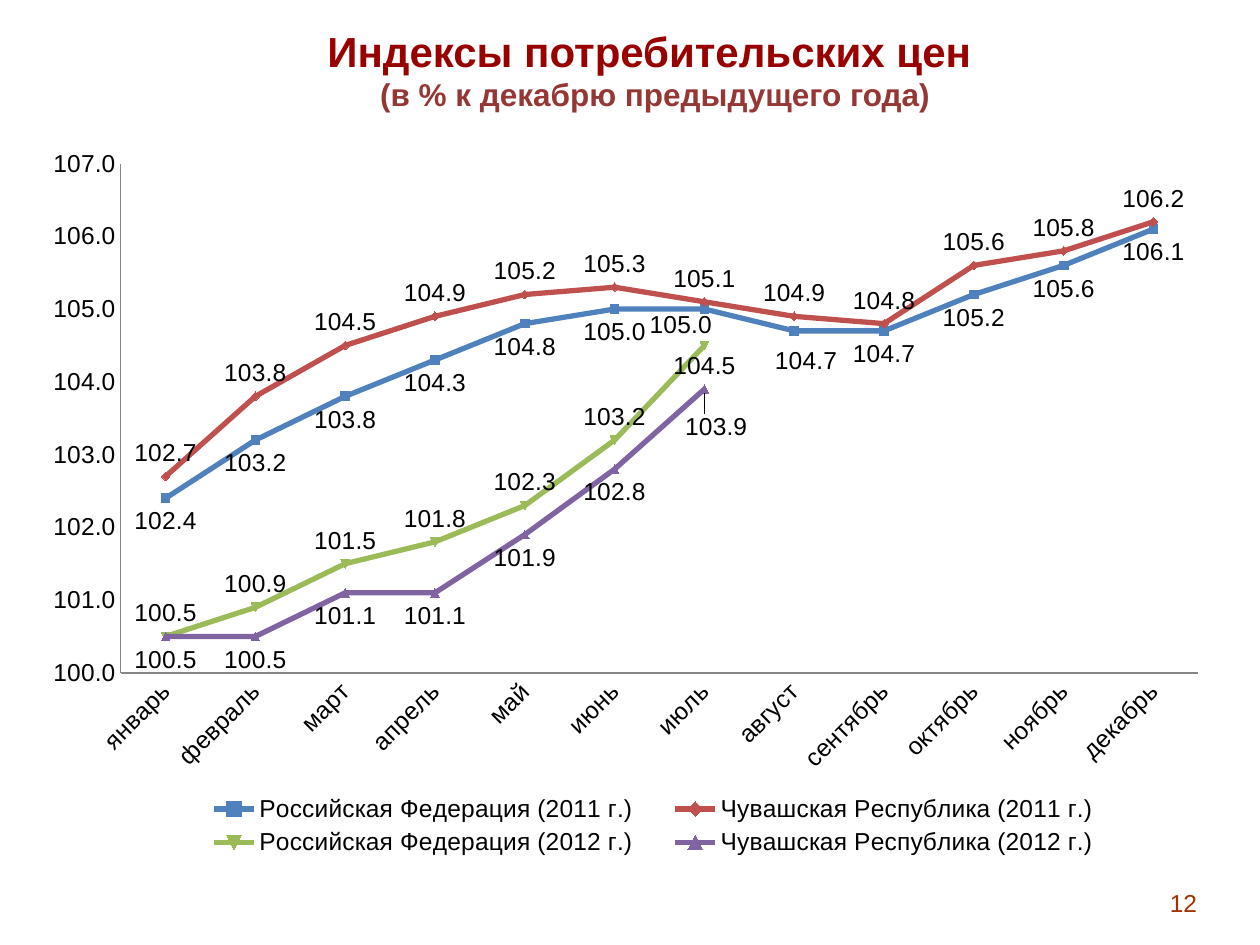
"""Build the consumer price index slide with its four-series line chart."""
from dataclasses import dataclass, field
from typing import Optional

from lxml import etree
from pptx import Presentation
from pptx import util as u
from pptx.chart.data import CategoryChartData
from pptx.dml.color import RGBColor
from pptx.enum import chart as ch, text
from pptx.oxml.ns import qn


@dataclass(frozen=True)
class Theme:
    font: str = "Arial"
    title: str = "990000"
    subtitle: str = "953735"
    number: str = "A03202"
    ink: str = "000000"
    axis: str = "868686"
    title_size: int = 24
    subtitle_size: int = 18
    small_size: int = 14
    line_width: float = 3


@dataclass(frozen=True)
class Share:
    x: float
    y: float
    w: float
    h: float


@dataclass(frozen=True)
class Line:
    text: str
    size: int
    color: str
    bold: bool = False


@dataclass(frozen=True)
class Index:
    name: str
    color: str
    above: bool
    values: tuple[float, ...]
    shifts: dict[int, tuple[float, float]] = field(default_factory=dict)


THEME = Theme()
WIDTH, HEIGHT = u.Inches(10), u.Inches(7.5)
NUMBER_FORMAT = "0.0"
MONTHS = ("январь", "февраль", "март", "апрель", "май", "июнь", "июль",
          "август", "сентябрь", "октябрь", "ноябрь", "декабрь")
INDEXES = (
    Index("Российская Федерация (2011 г.)", "4F81BD", False,
          (102.4, 103.2, 103.8, 104.3, 104.8, 105, 105, 104.7, 104.7, 105.2, 105.6, 106.1),
          {6: (-0.02, -0.01), 7: (0.01, 0.01)}),
    Index("Чувашская Республика (2011 г.)", "C0504D", True,
          (102.7, 103.8, 104.5, 104.9, 105.2, 105.3, 105.1, 104.9, 104.8, 105.6, 105.8, 106.2)),
    Index("Российская Федерация (2012 г.)", "9BBB59", True,
          (100.5, 100.9, 101.5, 101.8, 102.3, 103.2, 104.5), {6: (0.0, 0.06)}),
    Index("Чувашская Республика (2012 г.)", "8064A2", False,
          (100.5, 100.5, 101.1, 101.1, 101.9, 102.8, 103.9), {6: (0.01, 0.02)}),
)


def assign(target, values: dict) -> None:
    for name, value in values.items():
        setattr(target, name, value)


def style(font, size: int, color: str, bold: bool = False) -> None:
    assign(font, {"name": THEME.font, "size": u.Pt(size), "bold": bold})
    font.color.rgb = RGBColor.from_string(color)


def place(area: Share) -> tuple[int, int, int, int]:
    return (round(area.x * WIDTH), round(area.y * HEIGHT),
            round(area.w * WIDTH), round(area.h * HEIGHT))


def layout(values: dict):
    root = etree.Element(qn("c:layout"))
    manual = etree.SubElement(root, qn("c:manualLayout"))
    for name, value in values.items():
        etree.SubElement(manual, qn(f"c:{name}")).set("val", str(value))
    return root


def fixed_layout(area: Share, **target: str):
    return layout({**target, "xMode": "edge", "yMode": "edge",
                   "x": area.x, "y": area.y, "w": area.w, "h": area.h})


def add_text(slide, area: Share, lines: list[Line], align, anchor) -> None:
    tf = slide.shapes.add_textbox(*place(area)).text_frame
    assign(tf, {"word_wrap": True, "vertical_anchor": anchor})
    for i, line in enumerate(lines):
        p = tf.add_paragraph() if i else tf.paragraphs[0]
        p.alignment = align
        r = p.add_run()
        r.text = line.text
        style(r.font, line.size, line.color, line.bold)


def shift_label(series, point: int, shift: tuple[float, float], position) -> None:
    label = series.points[point].data_label
    label.position = position
    style(label.font, THEME.small_size, THEME.ink)
    element = series.data_labels._element.xpath(f"c:dLbl[c:idx/@val='{point}']")[0]
    element.insert(1, layout({"x": shift[0], "y": shift[1]}))
    number = etree.Element(qn("c:numFmt"), formatCode=NUMBER_FORMAT, sourceLinked="0")
    element.insert(2, number)


def format_series(series, index: Index) -> None:
    color = RGBColor.from_string(index.color)
    series.smooth = False
    series.format.line.width = u.Pt(THEME.line_width)
    series.format.line.color.rgb = color
    marker = series.marker.format
    marker.fill.solid()
    marker.fill.fore_color.rgb = color
    marker.line.color.rgb = color
    position = ch.XL_LABEL_POSITION.ABOVE if index.above else ch.XL_LABEL_POSITION.BELOW
    labels = series.data_labels
    assign(labels, {"show_value": True, "position": position,
                    "number_format": NUMBER_FORMAT, "number_format_is_linked": False})
    style(labels.font, THEME.small_size, THEME.ink)
    for point, shift in index.shifts.items():
        shift_label(series, point, shift, position)


def format_axis(axis, values: dict) -> None:
    assign(axis, {"has_major_gridlines": False,
                  "major_tick_mark": ch.XL_TICK_MARK.NONE,
                  "minor_tick_mark": ch.XL_TICK_MARK.NONE, **values})
    style(axis.tick_labels.font, THEME.small_size, THEME.ink)
    axis.format.line.color.rgb = RGBColor.from_string(THEME.axis)


def add_index_chart(slide, area: Share, plot: Share, legend: Share) -> None:
    data = CategoryChartData(number_format=NUMBER_FORMAT)
    data.categories = MONTHS
    for index in INDEXES:
        padding: tuple[Optional[float], ...] = (None,) * (len(MONTHS) - len(index.values))
        data.add_series(index.name, index.values + padding)
    chart = slide.shapes.add_chart(ch.XL_CHART_TYPE.LINE_MARKERS, *place(area), data).chart
    assign(chart, {"has_title": False, "has_legend": True})
    style(chart.font, THEME.subtitle_size, THEME.ink)
    chart.plots[0].vary_by_categories = False
    for series, index in zip(chart.plots[0].series, INDEXES):
        format_series(series, index)
    format_axis(chart.category_axis, {})
    body = chart.category_axis._element.find(f"{qn('c:txPr')}/{qn('a:bodyPr')}")
    body.set("rot", "-2700000")
    format_axis(chart.value_axis, {"minimum_scale": 100, "maximum_scale": 107, "major_unit": 1})
    assign(chart.value_axis.tick_labels,
           {"number_format": NUMBER_FORMAT, "number_format_is_linked": False})
    assign(chart.legend, {"position": ch.XL_LEGEND_POSITION.BOTTOM, "include_in_layout": False})
    style(chart.legend.font, THEME.small_size, THEME.ink)
    key = chart.legend._element
    plot_area = chart._chartSpace.chart.plotArea
    for parent, spot, element in ((plot_area, 0, fixed_layout(plot, layoutTarget="inner")),
                                  (key, 1, fixed_layout(legend))):
        for old in parent.findall(qn("c:layout")):
            parent.remove(old)
        parent.insert(spot, element)


def main() -> None:
    prs = Presentation()
    assign(prs, {"slide_width": WIDTH, "slide_height": HEIGHT})
    slide = prs.slides.add_slide(prs.slide_layouts[6])
    add_index_chart(slide, Share(0.03, 0.15, 0.94, 0.77),
                    Share(0.07, 0.03, 0.91, 0.7), Share(0.12, 0.89, 0.8, 0.1))
    add_text(slide, Share(0.06, 0.02, 0.92, 0.11),
             [Line("Индексы потребительских цен ", THEME.title_size, THEME.title, True),
              Line("(в % к декабрю предыдущего года)", THEME.subtitle_size, THEME.subtitle, True)],
             text.PP_ALIGN.CENTER, text.MSO_ANCHOR.TOP)
    add_text(slide, Share(0.85, 0.93, 0.11, 0.05),
             [Line("12", THEME.small_size, THEME.number)],
             text.PP_ALIGN.RIGHT, text.MSO_ANCHOR.MIDDLE)
    prs.save("out.pptx")


if __name__ == "__main__":
    main()
